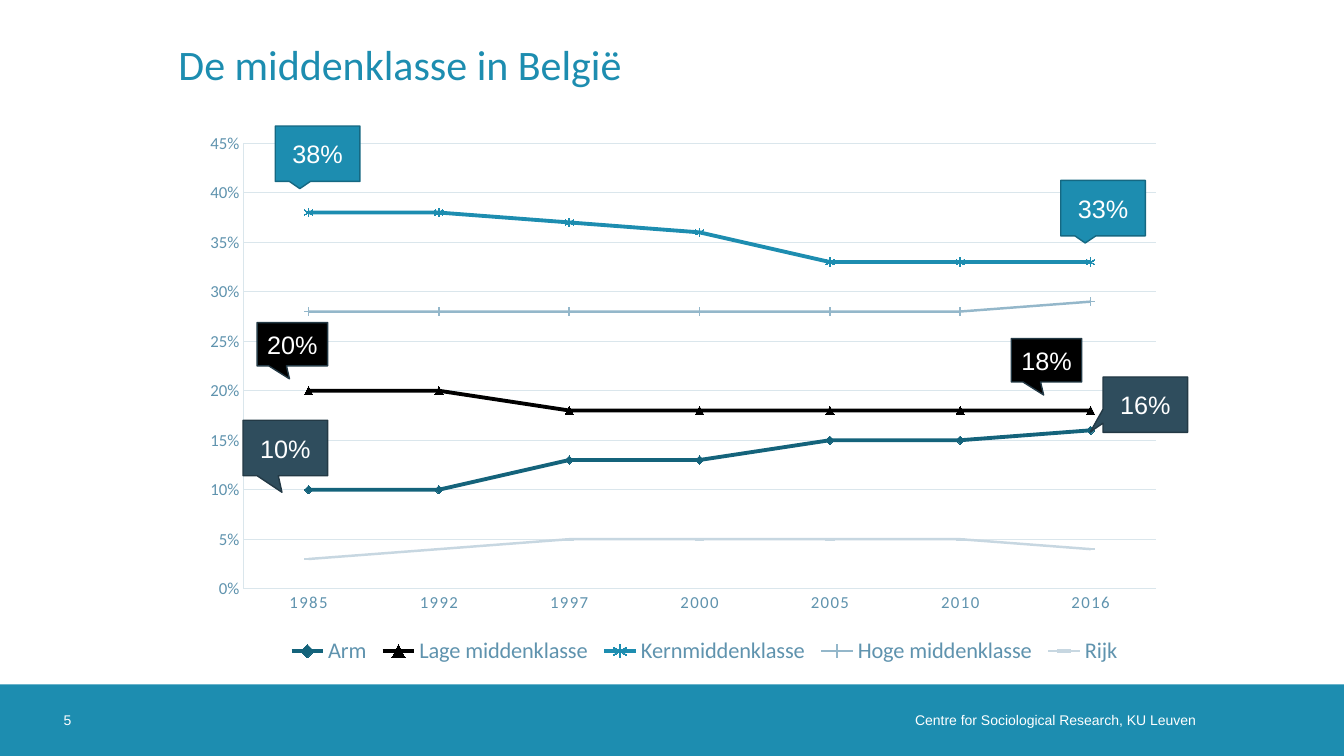
import dataclasses

import pptx
import pptx.chart.data
import pptx.dml.color
import pptx.enum.chart
import pptx.enum.shapes
import pptx.enum.text
import pptx.oxml
import pptx.oxml.ns
import pptx.util


@dataclasses.dataclass(frozen=True)
class Theme:
    blue: str = "1D8DB0"
    blue_edge: str = "156882"
    petrol: str = "14637B"
    slate: str = "2F4D5D"
    slate_edge: str = "233945"
    mist: str = "94B7CA"
    pale: str = "C7D7E1"
    grid: str = "DAE6EC"
    label: str = "5F93AE"
    black: str = "000000"
    white: str = "FFFFFF"
    heading_font: str = "Calibri"
    body_font: str = "Arial"
    title_size: int = 30
    callout_size: int = 18
    legend_size: int = 16
    axis_size: int = 12
    footer_size: int = 10


THEME = Theme()
MARKER = pptx.enum.chart.XL_MARKER_STYLE
WIDTH, HEIGHT = pptx.util.Inches(13.33), pptx.util.Inches(7.5)

TITLE = "De middenklasse in België"
FOOTER = "Centre for Sociological Research, KU Leuven"
PAGE = "5"
YEARS = ["1985", "1992", "1997", "2000", "2005", "2010", "2016"]
# Class, shares by year, colour, line width, marker, filled marker
CLASSES = [
    ("Arm", (0.10, 0.10, 0.13, 0.13, 0.15, 0.15, 0.16),
     THEME.petrol, 2.75, MARKER.DIAMOND, True),
    ("Lage middenklasse", (0.20, 0.20, 0.18, 0.18, 0.18, 0.18, 0.18),
     THEME.black, 2.75, MARKER.TRIANGLE, True),
    ("Kernmiddenklasse", (0.38, 0.38, 0.37, 0.36, 0.33, 0.33, 0.33),
     THEME.blue, 2.75, MARKER.STAR, False),
    ("Hoge middenklasse", (0.28, 0.28, 0.28, 0.28, 0.28, 0.28, 0.29),
     THEME.mist, 1.75, MARKER.PLUS, False),
    ("Rijk", (0.03, 0.04, 0.05, 0.05, 0.05, 0.05, 0.04),
     THEME.pale, 1.75, MARKER.DASH, True),
]

# Places and sizes are percentages of the slide's width and height
TITLE_AREA = (13.28, 0, 86.72, 16.8)
CHART_AREA = (13.73, 16.8, 73, 71.87)
FOOTER_TOP, FOOTER_HEIGHT = 90.53, 9.47
LARGE, SMALL = (6.3, 7.33), (5.25, 5.73)
TIP_BELOW, TIP_LOW, TIP_LEFT = (-0.21, 0.63), (-0.04, 0.8), (-0.65, 0.49)
CALLOUTS = [
    ("38%", (20.48, 16.67), LARGE, TIP_BELOW, THEME.blue, THEME.blue_edge),
    ("33%", (78.92, 23.87), LARGE, TIP_BELOW, THEME.blue, THEME.blue_edge),
    ("16%", (82.07, 49.87), LARGE, TIP_LEFT, THEME.slate, THEME.slate_edge),
    ("10%", (18.08, 55.6), LARGE, TIP_LOW, THEME.slate, THEME.slate_edge),
    ("20%", (19.13, 42.67), SMALL, TIP_LOW, THEME.black, THEME.slate_edge),
    ("18%", (75.24, 44.8), SMALL, TIP_LOW, THEME.black, THEME.slate_edge),
]
# Shares of the chart's own area
PLOT_LAYOUT = (0.06, 0.03, 0.93, 0.82)
LEGEND_LAYOUT = (0.1, 0.93, 0.86, 0.07)


def place(left, top, width, height):
    return [round(share * length / 100) for share, length in
            zip((left, top, width, height), (WIDTH, HEIGHT) * 2)]


def rgb(colour):
    return pptx.dml.color.RGBColor.from_string(colour)


def paint(format_part, colour):
    format_part.fill.solid()
    format_part.fill.fore_color.rgb = rgb(colour)


def style_font(font, size, colour, face):
    font.size = pptx.util.Pt(size)
    font.name = face
    font.bold = False
    font.color.rgb = rgb(colour)


def style_line(line, colour, width):
    line.color.rgb = rgb(colour)
    line.width = pptx.util.Pt(width)


def write(shape, text, size, colour, face, align="LEFT"):
    frame = shape.text_frame
    frame.text = text
    frame.vertical_anchor = pptx.enum.text.MSO_ANCHOR.MIDDLE
    paragraph = frame.paragraphs[0]
    paragraph.alignment = pptx.enum.text.PP_ALIGN[align]
    style_font(paragraph.font, size, colour, face)


def add_text(slide, area, *text_style, right_inset=0):
    box = slide.shapes.add_textbox(*place(*area))
    frame = box.text_frame
    frame.word_wrap = True
    frame.margin_left = frame.margin_top = frame.margin_bottom = 0
    frame.margin_right = pptx.util.Inches(right_inset)
    write(box, *text_style)


def add_block(slide, preset, area, colour):
    block = slide.shapes.add_shape(preset, *place(*area))
    block.shadow.inherit = False
    paint(block, colour)
    return block


def manual_layout(box, inner=False):
    """Layout element fixing a chart part at the given shares of the chart."""
    target = '<c:layoutTarget val="inner"/>' if inner else ""
    modes = "".join(f'<c:{side}Mode val="edge"/>' for side in "xy")
    values = "".join(f'<c:{key} val="{share}"/>' for key, share in zip("xywh", box))
    return pptx.oxml.parse_xml(
        f'<c:layout {pptx.oxml.ns.nsdecls("c")}><c:manualLayout>'
        f"{target}{modes}{values}</c:manualLayout></c:layout>")


def fix_layouts(chart):
    plot_area = chart._chartSpace.xpath("c:chart/c:plotArea")[0]
    legend = chart._chartSpace.xpath("c:chart/c:legend")[0]
    for part in (plot_area, legend):
        for layout in part.xpath("c:layout"):
            part.remove(layout)
    plot_area.insert(0, manual_layout(PLOT_LAYOUT, inner=True))
    legend.xpath("c:legendPos")[0].addnext(manual_layout(LEGEND_LAYOUT))


def style_axes(chart):
    for axis in (chart.category_axis, chart.value_axis):
        axis.major_tick_mark = axis.minor_tick_mark = pptx.enum.chart.XL_TICK_MARK.NONE
        style_font(axis.tick_labels.font, THEME.axis_size, THEME.label, THEME.heading_font)
        style_line(axis.format.line, THEME.grid, 0.75)
    for letters in chart._chartSpace.xpath(".//c:catAx/c:txPr//a:defRPr"):
        letters.set("spc", "100")
    shares = chart.value_axis
    shares.minimum_scale, shares.maximum_scale, shares.major_unit = 0, 0.45, 0.05
    shares.tick_labels.number_format = "0%"
    shares.tick_labels.number_format_is_linked = False
    shares.has_major_gridlines = True
    style_line(shares.major_gridlines.format.line, THEME.grid, 0.75)


def add_class_chart(slide):
    data = pptx.chart.data.CategoryChartData(number_format="0%")
    data.categories = YEARS
    for name, shares, *_ in CLASSES:
        data.add_series(name, shares)
    chart = slide.shapes.add_chart(
        pptx.enum.chart.XL_CHART_TYPE.LINE_MARKERS, *place(*CHART_AREA), data).chart
    style_font(chart.font, THEME.footer_size, THEME.slate, THEME.body_font)
    chart.has_title = False
    chart.has_legend = True
    chart.legend.position = pptx.enum.chart.XL_LEGEND_POSITION.BOTTOM
    chart.legend.include_in_layout = False
    style_font(chart.legend.font, THEME.legend_size, THEME.label, THEME.heading_font)
    plot = chart.plots[0]
    plot.vary_by_categories = False
    for series, (_, _, colour, width, marker, filled) in zip(plot.series, CLASSES):
        series.smooth = False
        style_line(series.format.line, colour, width)
        series.marker.style = marker
        series.marker.size = 6
        style_line(series.marker.format.line, colour, 0.75)
        if filled:
            paint(series.marker.format, colour)
        else:
            series.marker.format.fill.background()
    style_axes(chart)
    fix_layouts(chart)


def main():
    deck = pptx.Presentation()
    deck.slide_width, deck.slide_height = WIDTH, HEIGHT
    slide = deck.slides.add_slide(deck.slide_layouts[6])
    preset = pptx.enum.shapes.MSO_SHAPE
    footer_rows = (FOOTER_TOP, FOOTER_HEIGHT)
    footer_style = (THEME.footer_size, THEME.white, THEME.body_font)

    band = add_block(slide, preset.RECTANGLE, (0, FOOTER_TOP, 100, FOOTER_HEIGHT), THEME.blue)
    band.line.fill.background()
    add_text(slide, (49.51, FOOTER_TOP, 40.96, FOOTER_HEIGHT), FOOTER, *footer_style,
             "RIGHT", right_inset=0.2)
    add_text(slide, (4.73, FOOTER_TOP, 5.33, FOOTER_HEIGHT), PAGE, *footer_style)
    add_text(slide, TITLE_AREA, TITLE, THEME.title_size, THEME.blue, THEME.heading_font)
    add_class_chart(slide)
    for share, corner, size, tip, colour, edge in CALLOUTS:
        callout = add_block(slide, preset.RECTANGULAR_CALLOUT, corner + size, colour)
        style_line(callout.line, edge, 1)
        callout.adjustments[0], callout.adjustments[1] = tip
        callout.text_frame.word_wrap = False
        write(callout, share, THEME.callout_size, THEME.white, THEME.body_font, "CENTER")
    deck.save("out.pptx")


if __name__ == "__main__":
    main()
